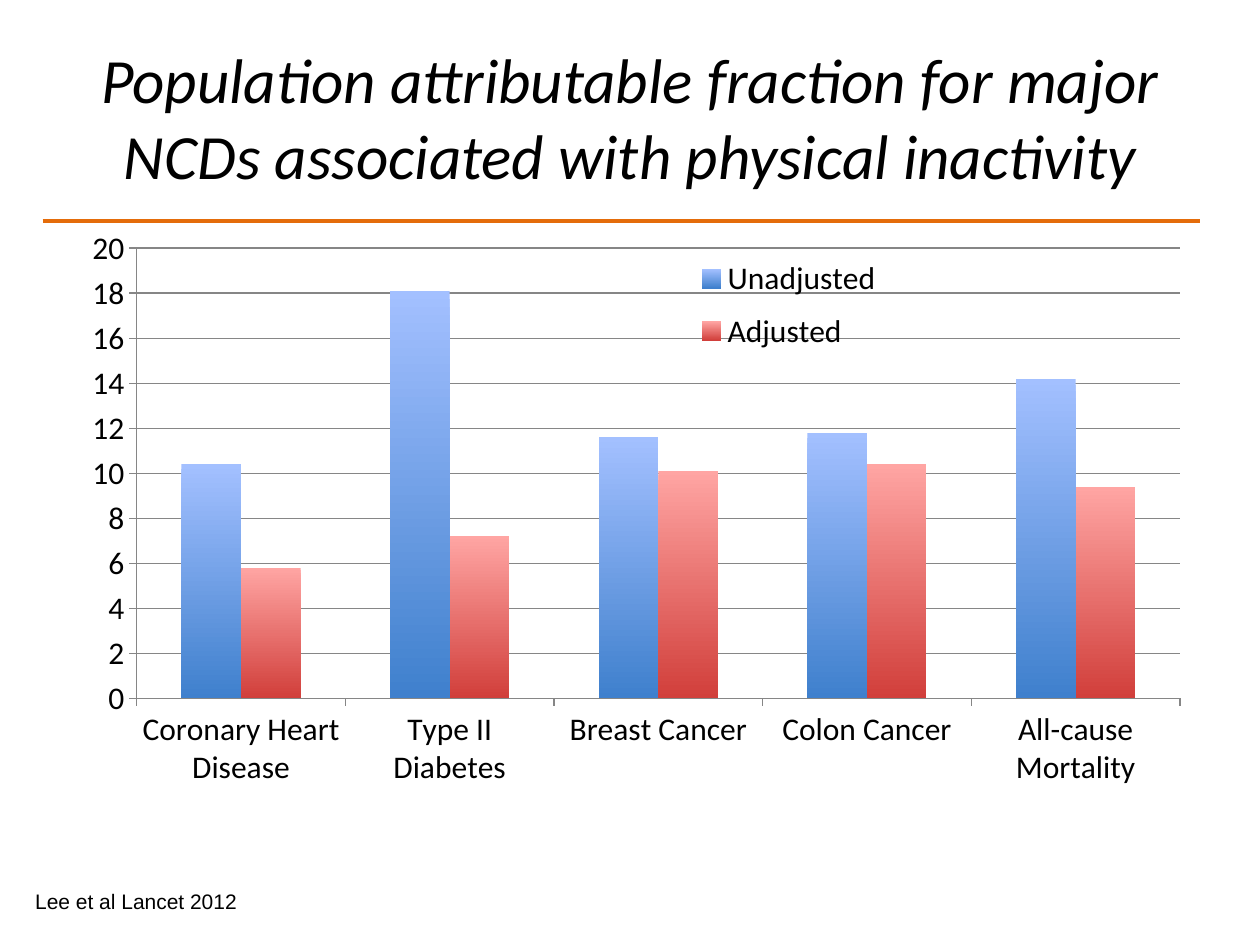
from dataclasses import dataclass

from lxml.etree import SubElement
from pptx import Presentation
from pptx.chart.data import CategoryChartData
from pptx.dml.color import RGBColor as Color
from pptx.enum.chart import XL_CHART_TYPE as ChartType
from pptx.enum.chart import XL_LEGEND_POSITION as LegendPosition
from pptx.enum.chart import XL_TICK_MARK as TickMark
from pptx.enum.shapes import MSO_CONNECTOR as Connector
from pptx.enum.text import MSO_ANCHOR as Anchor
from pptx.enum.text import PP_ALIGN as Align
from pptx.oxml import parse_xml
from pptx.oxml.ns import nsdecls, qn
from pptx.util import Cm, Pt


@dataclass(frozen=True)
class Theme:
    heading_font: str = "Calibri"
    note_font: str = "Arial"
    title_size: Pt = Pt(36)
    chart_size: Pt = Pt(18)
    note_size: Pt = Pt(12)
    text: Color = Color(0x00, 0x00, 0x00)
    rule: Color = Color(0xE4, 0x6C, 0x0A)
    grid: Color = Color(0x86, 0x86, 0x86)
    # Top and bottom colour of each series' bars
    bars: tuple = (
        (Color(0xA3, 0xC0, 0xFF), Color(0x3F, 0x80, 0xCD)),
        (Color(0xFF, 0xA5, 0xA3), Color(0xD1, 0x3F, 0x3B)),
    )


THEME = Theme()

CATEGORIES = ("Coronary Heart Disease", "Type II Diabetes", "Breast Cancer",
              "Colon Cancer", "All-cause Mortality")
SERIES = {
    "Unadjusted": (10.4, 18.1, 11.6, 11.8, 14.2),
    "Adjusted": (5.8, 7.2, 10.1, 10.4, 9.4),
}


def style_font(font, name, size):
    font.name = name
    font.size = size
    font.color.rgb = THEME.text


def add_text(page, area, text, font_name, size, align=Align.LEFT,
             anchor=Anchor.TOP, italic=False):
    box = page.shapes.add_textbox(*area)
    frame = box.text_frame
    frame.word_wrap = True
    frame.vertical_anchor = anchor
    para = frame.paragraphs[0]
    para.text = text
    para.alignment = align
    style_font(para.font, font_name, size)
    para.font.italic = italic


def add_rule(page, left, right, top):
    rule = page.shapes.add_connector(Connector.STRAIGHT, left, top, right, top)
    rule.line.color.rgb = THEME.rule
    rule.line.width = Pt(2)
    SubElement(rule._element.spPr, qn("a:effectLst"))


def set_layout(element, index, area, inner=False):
    """Place a chart part by fractions (x, y, w, h) of the chart area."""
    for old in element.findall(qn("c:layout")):
        element.remove(old)
    target = '<c:layoutTarget val="inner"/>' if inner else ""
    modes = "".join(f'<c:{side}Mode val="edge"/>' for side in "xy")
    sizes = "".join(f'<c:{key} val="{value}"/>' for key, value in zip("xywh", area))
    element.insert(index, parse_xml(
        f'<c:layout {nsdecls("c")}><c:manualLayout>{target}{modes}{sizes}'
        "</c:manualLayout></c:layout>"))


def style_axes(chart):
    values = chart.value_axis
    values.minimum_scale, values.maximum_scale, values.major_unit = 0, 20, 2
    values.has_major_gridlines = True
    for axis in (chart.category_axis, values):
        axis.major_tick_mark = TickMark.OUTSIDE
        axis.minor_tick_mark = TickMark.NONE
    for part in (chart.category_axis, values, values.major_gridlines):
        part.format.line.color.rgb = THEME.grid
        part.format.line.width = Pt(0.75)


def add_column_chart(page, area):
    data = CategoryChartData()
    data.categories = CATEGORIES
    for name, values in SERIES.items():
        data.add_series(name, values)
    chart = page.shapes.add_chart(ChartType.COLUMN_CLUSTERED, *area, data).chart
    chart.has_title = False
    style_font(chart.font, THEME.heading_font, THEME.chart_size)
    style_axes(chart)

    plot = chart.plots[0]
    plot.gap_width = 150
    plot.overlap = 0
    plot.vary_by_categories = False
    for series, colors in zip(plot.series, THEME.bars):
        series.invert_if_negative = False
        fill = series.format.fill
        fill.gradient()
        fill.gradient_angle = 270
        for stop, color in zip(fill.gradient_stops, colors):
            stop.color.rgb = color

    chart.has_legend = True
    chart.legend.position = LegendPosition.RIGHT
    chart.legend.include_in_layout = True
    set_layout(chart.legend._element, 1, (0.54, 0.04, 0.2, 0.19))
    set_layout(chart._chartSpace.chart.plotArea, 0,
               (0.065, 0.044, 0.92, 0.722), inner=True)


def main():
    deck = Presentation()
    deck.slide_width, deck.slide_height = Cm(25.4), Cm(19.05)
    page = deck.slides.add_slide(deck.slide_layouts[6])
    add_text(page, (Cm(1.27), Cm(0.76), Cm(22.86), Cm(3.18)),
             "Population attributable fraction for major NCDs associated "
             "with physical inactivity",
             THEME.heading_font, THEME.title_size, Align.CENTER,
             Anchor.MIDDLE, italic=True)
    add_column_chart(page, (Cm(1.27), Cm(4.45), Cm(22.86), Cm(12.57)))
    add_rule(page, Cm(0.86), Cm(24.2), Cm(4.45))
    add_text(page, (Cm(0.46), Cm(17.78), Cm(22.66), Cm(0.76)),
             "Lee et al Lancet 2012", THEME.note_font, THEME.note_size)
    deck.save("out.pptx")


if __name__ == "__main__":
    main()
